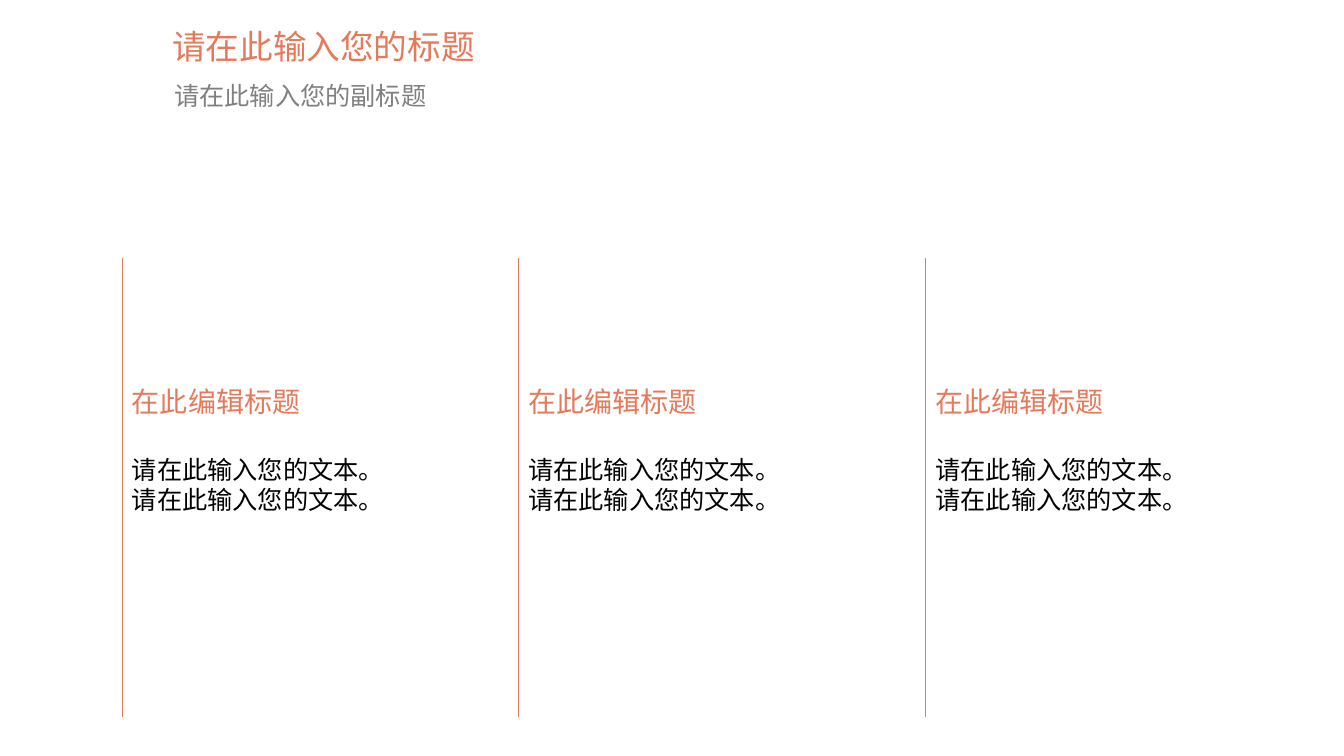
import pptx
import pptx.dml.color
import pptx.enum.shapes
import pptx.enum.text
import pptx.oxml
import pptx.util

CORAL = pptx.dml.color.RGBColor(0xE6, 0x79, 0x5A)
GREY = pptx.dml.color.RGBColor(0x80, 0x80, 0x80)
BLACK = pptx.dml.color.RGBColor(0x00, 0x00, 0x00)

SLIDE_WIDTH = pptx.util.Inches(13.33)
SLIDE_HEIGHT = pptx.util.Inches(7.5)
TOP = pptx.enum.text.MSO_ANCHOR.TOP
MIDDLE = pptx.enum.text.MSO_ANCHOR.MIDDLE

# Positions are percentages of the slide's width and height
COLUMN_LEFTS = (9.08, 38.56, 68.87)
COLUMN_WIDTH = 22.06
RULE_TOP, HEADING_TOP, BODY_TOP, COLUMN_BOTTOM = 34.13, 46.8, 59.47, 94.8


def across(percent):
    return round(SLIDE_WIDTH * percent / 100)


def down(percent):
    return round(SLIDE_HEIGHT * percent / 100)


def add_text(slide, text, left, top, width, height, size, color, anchor=TOP, spacing=None):
    box = slide.shapes.add_textbox(across(left), down(top), across(width), down(height))
    frame = box.text_frame
    frame.word_wrap = True
    frame.vertical_anchor = anchor
    paragraph = frame.paragraphs[0]
    paragraph.text = text
    paragraph.line_spacing = spacing
    paragraph.font.name = "Arial"
    paragraph.font.size = pptx.util.Pt(size)
    paragraph.font.color.rgb = color


def add_rule(slide, left):
    rule = slide.shapes.add_connector(
        pptx.enum.shapes.MSO_CONNECTOR.STRAIGHT,
        across(left), down(RULE_TOP), across(left), down(COLUMN_BOTTOM))
    rule.line.color.rgb = CORAL
    rule.line.width = pptx.util.Pt(0.75)
    # An empty effect list removes the theme shadow
    properties = rule.line._get_or_add_ln().getparent()
    properties.append(pptx.oxml.parse_xml(
        '<a:effectLst xmlns:a="http://schemas.openxmlformats.org/drawingml/2006/main"/>'))


def add_column(slide, left):
    add_text(slide, "在此编辑标题", left, HEADING_TOP, COLUMN_WIDTH,
             BODY_TOP - HEADING_TOP, 20, CORAL, MIDDLE)
    add_text(slide, "请在此输入您的文本。请在此输入您的文本。", left, BODY_TOP,
             COLUMN_WIDTH, COLUMN_BOTTOM - BODY_TOP, 18, BLACK)
    add_rule(slide, left)


def main():
    deck = pptx.Presentation()
    deck.slide_width = SLIDE_WIDTH
    deck.slide_height = SLIDE_HEIGHT
    slide = deck.slides.add_slide(deck.slide_layouts[6])

    # Title and subtitle
    add_text(slide, "请在此输入您的标题", 12.08, 1.87, 71.72, 8.53, 24, CORAL, MIDDLE)
    add_text(slide, "请在此输入您的副标题", 12.23, 10.4, 71.57, 7.2, 18, GREY, spacing=0.9)

    # Three ruled text columns
    for left in COLUMN_LEFTS:
        add_column(slide, left)

    deck.save("out.pptx")


if __name__ == "__main__":
    main()
